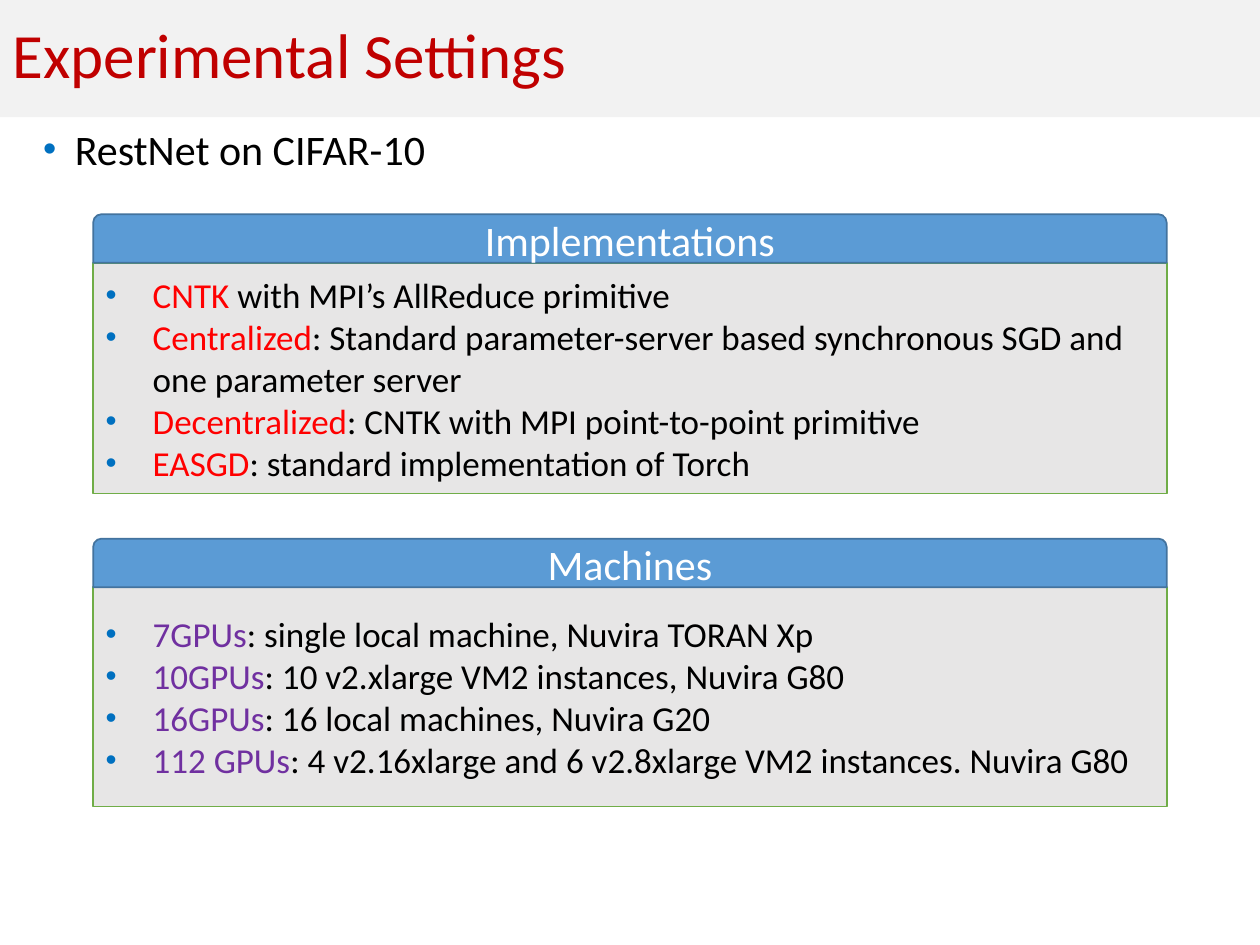
from dataclasses import dataclass

from lxml import etree
from pptx import Presentation
from pptx.dml.color import RGBColor
from pptx.enum.shapes import MSO_SHAPE
from pptx.enum.text import MSO_ANCHOR, MSO_AUTO_SIZE, PP_ALIGN
from pptx.oxml.ns import qn
from pptx.util import Cm, Pt

RECTANGLE = MSO_SHAPE.RECTANGLE
ROUNDED_TOP = MSO_SHAPE.ROUND_2_SAME_RECTANGLE
MIDDLE = MSO_ANCHOR.MIDDLE
LEFT, CENTER = PP_ALIGN.LEFT, PP_ALIGN.CENTER
TITLE_ONLY = 5


@dataclass(frozen=True)
class Theme:
    font: str = "Calibri"
    title_size: int = 36
    heading_size: int = 24
    item_size: int = 20
    title: str = "C00000"
    title_band: str = "F2F2F2"
    text: str = "000000"
    bullet: str = "0070C0"
    header_fill: str = "5B9BD5"
    header_line: str = "43739E"
    header_text: str = "FFFFFF"
    panel_fill: str = "E7E6E6"
    panel_line: str = "70AD47"
    red: str = "FF0000"
    purple: str = "7030A0"


THEME = Theme()

TITLE = "Experimental Settings"
TOPIC = "RestNet on CIFAR-10"
# Tops and heights in cm
PANELS = [
    {
        "heading": "Implementations", "top": 4.32, "body_height": 4.65,
        "accent": THEME.red,
        "items": [
            ("CNTK", " with MPI’s AllReduce primitive"),
            ("Centralized", ": Standard parameter-server based synchronous SGD"
                            " and one parameter server"),
            ("Decentralized", ": CNTK with MPI point-to-point primitive"),
            ("EASGD", ": standard implementation of Torch"),
        ],
    },
    {
        "heading": "Machines", "top": 10.86, "body_height": 4.42,
        "accent": THEME.purple,
        "items": [
            ("7GPUs", ": single local machine, Nuvira TORAN Xp"),
            ("10GPUs", ": 10 v2.xlarge VM2 instances, Nuvira G80"),
            ("16GPUs", ": 16 local machines, Nuvira G20"),
            ("112 GPUs", ": 4 v2.16xlarge and 6 v2.8xlarge VM2 instances."
                         " Nuvira G80"),
        ],
    },
]

SLIDE_WIDTH, SLIDE_HEIGHT = 25.4, 19.05
TITLE_HEIGHT = 2.36
TOPIC_MARGIN, TOPIC_HEIGHT = 0.62, 14.8
PANEL_MARGIN = 1.88
HEADER_HEIGHT = 0.98


def add_run(paragraph, text, size, color):
    run = paragraph.add_run()
    run.text = text
    run.font.name = THEME.font
    run.font.size = Pt(size)
    run.font.color.rgb = RGBColor.from_string(color)


def add_bullet(paragraph, indent):
    """Hang the paragraph by indent cm behind a coloured bullet."""
    properties = paragraph._p.get_or_add_pPr()
    properties.set("marL", str(Cm(indent)))
    properties.set("indent", str(-Cm(indent)))
    color = etree.SubElement(properties, qn("a:buClr"))
    etree.SubElement(color, qn("a:srgbClr"), val=THEME.bullet)
    etree.SubElement(properties, qn("a:buSzPct"), val="90000")
    etree.SubElement(properties, qn("a:buFont"), typeface="Arial")
    etree.SubElement(properties, qn("a:buChar"), char="•")


def fill_solid(shape, color):
    shape.fill.solid()
    shape.fill.fore_color.rgb = RGBColor.from_string(color)


def add_box(slide, preset, top, height, fill, line):
    box = slide.shapes.add_shape(
        preset, Cm(PANEL_MARGIN), Cm(top),
        Cm(SLIDE_WIDTH - 2 * PANEL_MARGIN), Cm(height))
    box.shadow.inherit = False
    fill_solid(box, fill)
    box.line.color.rgb = RGBColor.from_string(line)
    box.line.width = Pt(1)
    box.text_frame.word_wrap = True
    box.text_frame.vertical_anchor = MIDDLE
    return box.text_frame


def add_title(slide):
    title = slide.shapes.title
    title.left, title.top = Cm(0), Cm(0)
    title.width, title.height = Cm(SLIDE_WIDTH), Cm(TITLE_HEIGHT)
    fill_solid(title, THEME.title_band)
    frame = title.text_frame
    frame.auto_size = MSO_AUTO_SIZE.NONE
    frame.vertical_anchor = MIDDLE
    paragraph = frame.paragraphs[0]
    paragraph.alignment = LEFT
    paragraph.line_spacing = 0.9
    add_run(paragraph, TITLE, THEME.title_size, THEME.title)


def add_topic(slide):
    topic = slide.shapes.add_textbox(
        Cm(TOPIC_MARGIN), Cm(TITLE_HEIGHT),
        Cm(SLIDE_WIDTH - 2 * TOPIC_MARGIN), Cm(TOPIC_HEIGHT))
    topic.text_frame.word_wrap = True
    paragraph = topic.text_frame.paragraphs[0]
    paragraph.space_before = paragraph.space_after = Pt(10)
    add_bullet(paragraph, 0.64)
    add_run(paragraph, TOPIC, THEME.heading_size, THEME.text)


def add_panel(slide, panel):
    body = add_box(slide, RECTANGLE, panel["top"] + HEADER_HEIGHT,
                   panel["body_height"], THEME.panel_fill, THEME.panel_line)
    for index, (term, detail) in enumerate(panel["items"]):
        paragraph = body.add_paragraph() if index else body.paragraphs[0]
        paragraph.alignment = LEFT
        add_bullet(paragraph, 0.95)
        add_run(paragraph, term, THEME.item_size, panel["accent"])
        add_run(paragraph, detail, THEME.item_size, THEME.text)

    header = add_box(slide, ROUNDED_TOP, panel["top"], HEADER_HEIGHT,
                     THEME.header_fill, THEME.header_line)
    heading = header.paragraphs[0]
    heading.alignment = CENTER
    add_run(heading, panel["heading"], THEME.heading_size, THEME.header_text)


def main():
    presentation = Presentation()
    presentation.slide_width = Cm(SLIDE_WIDTH)
    presentation.slide_height = Cm(SLIDE_HEIGHT)
    slide = presentation.slides.add_slide(
        presentation.slide_layouts[TITLE_ONLY])
    add_title(slide)
    add_topic(slide)
    for panel in PANELS:
        add_panel(slide, panel)
    presentation.save("out.pptx")


if __name__ == "__main__":
    main()
